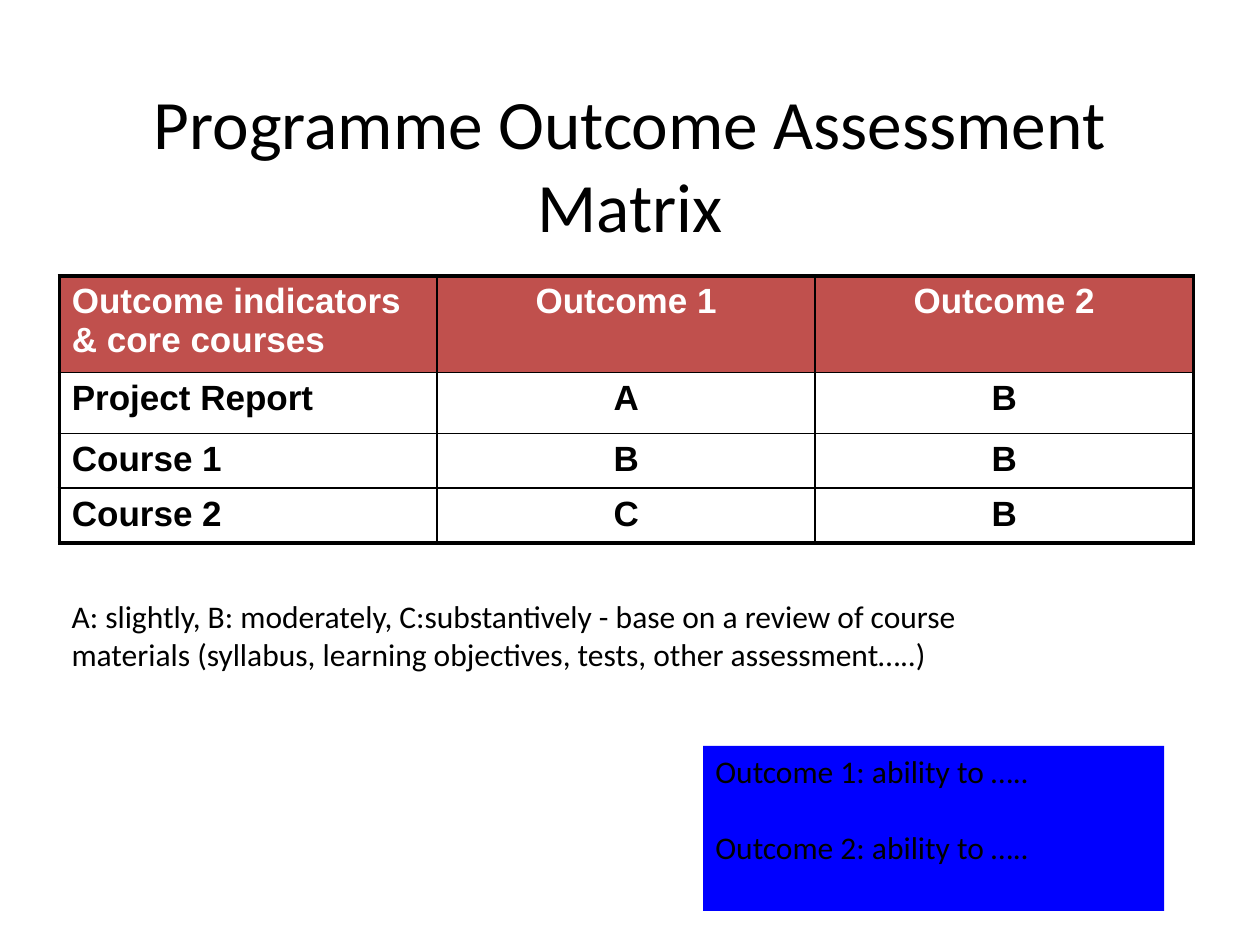
from typing import NamedTuple

from lxml import etree
from pptx import Presentation
from pptx.dml.color import RGBColor
from pptx.enum.shapes import MSO_SHAPE
from pptx.enum.text import MSO_ANCHOR, PP_ALIGN
from pptx.oxml.ns import qn
from pptx.util import Pt

LEFT, CENTER = PP_ALIGN.LEFT, PP_ALIGN.CENTER
TOP, MIDDLE = MSO_ANCHOR.TOP, MSO_ANCHOR.MIDDLE
RECTANGLE = MSO_SHAPE.RECTANGLE

COLORS = {"ink": "000000", "header": "C0504D", "paper": "FFFFFF", "key": "0000FF"}
OUTER_BORDER, INNER_BORDER = 2.25, 1.0
COLUMN_WIDTH = 216
ROW_HEIGHTS = [48, 34.8, 29.6, 29.6]
MATRIX = [
    ["Outcome indicators & core courses", "Outcome 1", "Outcome 2"],
    ["Project Report", "A", "B"],
    ["Course 1", "B", "B"],
    ["Course 2", "C", "B"],
]


class Box(NamedTuple):
    left: float
    top: float
    width: float
    height: float

    def lengths(self) -> list[Pt]:
        return [Pt(value) for value in self]


class Caption(NamedTuple):
    box: Box
    text: str
    size: float
    align: PP_ALIGN = LEFT
    anchor: MSO_ANCHOR = TOP


CAPTIONS = [
    Caption(Box(54, 48.24, 612, 90), "Programme Outcome Assessment Matrix", 39.6, CENTER, MIDDLE),
    Caption(
        Box(33.84, 337.68, 588.24, 93.6),
        "A: slightly, B: moderately, C:substantively - base on a review of course "
        "materials (syllabus, learning objectives, tests, other assessment…..)",
        18,
    ),
]
MATRIX_BOX = Box(33.84, 157.68, 3 * COLUMN_WIDTH, sum(ROW_HEIGHTS))
KEY_BOX = Box(401.76, 426.24, 263.52, 94.32)
KEY_LINES = "Outcome 1: ability to …..\nOutcome 2: ability to ….."


def write(frame, text: str, *, size: float, font: str = "Calibri", color: str = "ink",
          bold: bool = False, align: PP_ALIGN = LEFT, gap: float = 0) -> None:
    frame.word_wrap = True
    for index, line in enumerate(text.split("\n")):
        paragraph = frame.add_paragraph() if index else frame.paragraphs[0]
        paragraph.alignment = align
        if index:
            paragraph.space_before = Pt(gap)
        run = paragraph.add_run()
        run.text = line
        run.font.name = font
        run.font.size = Pt(size)
        run.font.bold = bold
        run.font.color.rgb = RGBColor.from_string(COLORS[color])


def draw_caption(slide, caption: Caption) -> None:
    frame = slide.shapes.add_textbox(*caption.box.lengths()).text_frame
    frame.vertical_anchor = caption.anchor
    write(frame, caption.text, size=caption.size, align=caption.align)


def set_borders(cell, outer_sides: dict[str, bool]) -> None:
    properties = cell._tc.get_or_add_tcPr()
    for position, (side, is_outer) in enumerate(outer_sides.items()):
        width = Pt(OUTER_BORDER if is_outer else INNER_BORDER)
        border = etree.Element(qn(f"a:ln{side}"), w=str(int(width)))
        fill = etree.SubElement(border, qn("a:solidFill"))
        etree.SubElement(fill, qn("a:srgbClr"), val=COLORS["ink"])
        properties.insert(position, border)


def draw_matrix(slide) -> None:
    last_row, last_column = len(MATRIX) - 1, len(MATRIX[0]) - 1
    table = slide.shapes.add_table(last_row + 1, last_column + 1, *MATRIX_BOX.lengths()).table
    for column in table.columns:
        column.width = Pt(COLUMN_WIDTH)
    for r, (height, entries) in enumerate(zip(ROW_HEIGHTS, MATRIX)):
        table.rows[r].height = Pt(height)
        for c, entry in enumerate(entries):
            cell = table.cell(r, c)
            cell.fill.solid()
            cell.fill.fore_color.rgb = RGBColor.from_string(COLORS["paper" if r else "header"])
            set_borders(cell, {"L": c == 0, "R": c == last_column, "T": r == 0, "B": r == last_row})
            write(cell.text_frame, entry, size=20, font="Arial", bold=True,
                  color="ink" if r else "paper", align=CENTER if c else LEFT)


def draw_key(slide) -> None:
    key = slide.shapes.add_shape(RECTANGLE, *KEY_BOX.lengths())
    key.shadow.inherit = False
    key.fill.solid()
    key.fill.fore_color.rgb = RGBColor.from_string(COLORS["key"])
    key.line.fill.background()
    key.text_frame.vertical_anchor = TOP
    write(key.text_frame, KEY_LINES, size=18, gap=22)


def main() -> None:
    deck = Presentation()
    deck.slide_width, deck.slide_height = Pt(720), Pt(540)
    slide = deck.slides.add_slide(deck.slide_layouts[6])
    for caption in CAPTIONS:
        draw_caption(slide, caption)
    draw_matrix(slide)
    draw_key(slide)
    deck.save("out.pptx")


if __name__ == "__main__":
    main()
